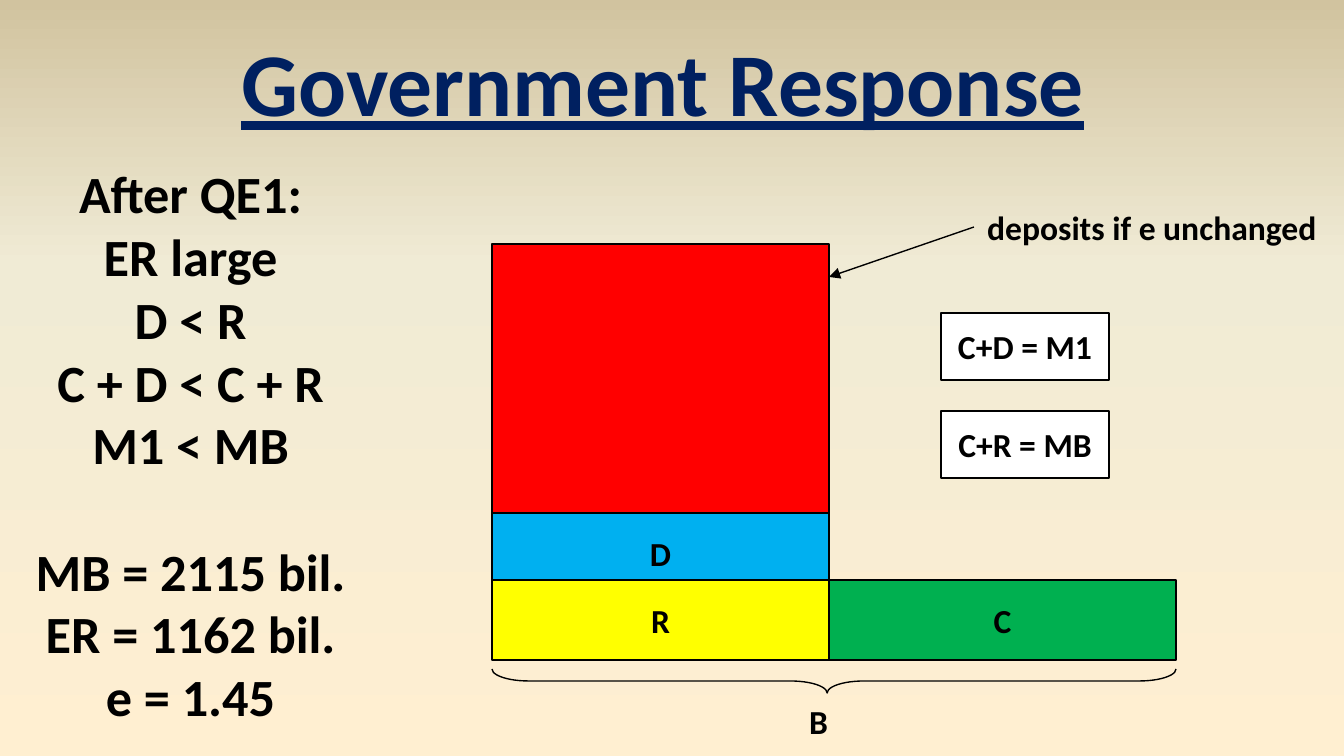
from copy import deepcopy
from pptx import Presentation
from pptx.dml.color import RGBColor
from pptx.enum.shapes import MSO_CONNECTOR, MSO_SHAPE
from pptx.enum.text import MSO_ANCHOR, MSO_AUTO_SIZE, PP_ALIGN
from pptx.oxml.ns import qn
from pptx.util import Pt
from lxml.etree import SubElement

THEME = {
    "font": "Calibri", "head": 48, "body": 28, "note": 18, "rule": 0.75,
    "navy": "002060", "ink": "000000", "white": "FFFFFF",
    "red": "FF0000", "blue": "00B0F0", "gold": "FFFF00", "green": "00B050",
    "wash": [(0, "FFEFD1"), (0.65, "F0EBD5"), (1, "D1C39F")],
}
TITLE = "Government Response"
FACTS = [
    ["After QE1:", "ER large", "D < R", "C + D < C + R", "M1 < MB"],
    ["MB = 2115 bil.", "ER = 1162 bil.", "e = 1.45"],
]
STACK = [("R", 80, "gold", MSO_ANCHOR.MIDDLE),
         ("D", 67, "blue", MSO_ANCHOR.BOTTOM),
         ("", 269, "red", MSO_ANCHOR.MIDDLE)]
SIDE = "C"
SUMS = ["C+D = M1", "C+R = MB"]
NOTE = "deposits if e unchanged"
BASE = "B"

LEFT, MID, RIGHT, FLOOR = 492, 829, 1176, 660
UNIT = 914400 / 134.4


def px(*nums):
    return [round(n * UNIT) for n in nums]


def tint(name):
    return RGBColor.from_string(THEME.get(name, name))


def write(shape, text, size="note", ink="ink", align=PP_ALIGN.CENTER,
          anchor=MSO_ANCHOR.TOP, wrap=False, grow=False, under=None):
    frame = shape.text_frame
    frame.word_wrap = wrap
    frame.vertical_anchor = anchor
    frame.auto_size = (MSO_AUTO_SIZE.SHAPE_TO_FIT_TEXT if grow
                       else MSO_AUTO_SIZE.NONE)
    frame.text = text
    for para in frame.paragraphs:
        para.alignment = align
        for run in para.runs:
            font = run.font
            font.name, font.size, font.bold = THEME["font"], Pt(THEME[size]), True
            font.underline = under
            font.color.rgb = tint(ink)


def edge(line):
    line.color.rgb = tint("ink")
    line.width = Pt(THEME["rule"])


def block(slide, area, text, fill, anchor=MSO_ANCHOR.MIDDLE):
    shape = slide.shapes.add_shape(MSO_SHAPE.RECTANGLE, *px(*area))
    shape.shadow.inherit = False
    shape.fill.solid()
    shape.fill.fore_color.rgb = tint(fill)
    edge(shape.line)
    if text:
        write(shape, text, anchor=anchor)


def label(slide, area, text, **form):
    shape = slide.shapes.add_textbox(*px(*area))
    write(shape, text, grow=True, **form)
    return shape


def wash(slide):
    fill = slide.background.fill
    fill.gradient()
    fill.gradient_angle = 90
    stops = slide.element.find(".//" + qn("a:gsLst"))
    while len(stops) > len(THEME["wash"]):
        stops.remove(stops[-1])
    while len(stops) < len(THEME["wash"]):
        stops.append(deepcopy(stops[0]))
    for stop, (place, shade) in zip(fill.gradient_stops, THEME["wash"]):
        stop.position = place
        stop.color.rgb = tint(shade)


def brace(slide, left, top, width, depth):
    shift = (width - depth) / 2
    shape = slide.shapes.add_shape(
        MSO_SHAPE.LEFT_BRACE, *px(left + shift, top - shift, depth, width))
    shape.rotation = 270
    shape.adjustments[0], shape.adjustments[1] = 1.54, 0.49
    shape.shadow.inherit = False
    shape.fill.background()
    edge(shape.line)


def arrow(slide, start, end):
    line = slide.shapes.add_connector(MSO_CONNECTOR.STRAIGHT, 0, 0, *px(*end))
    line.begin_connect(start, 1)
    edge(line.line)
    props = line.element.spPr
    SubElement(props.find(qn("a:ln")), qn("a:tailEnd"), type="triangle")
    SubElement(props, qn("a:effectLst"))


def main():
    deck = Presentation()
    deck.slide_width, deck.slide_height = px(1344, 756)
    slide = deck.slides.add_slide(deck.slide_layouts[5])
    wash(slide)

    title = slide.shapes.title
    title.left, title.top, title.width, title.height = px(224, 20, 878, 122)
    write(title, TITLE, size="head", ink="navy", grow=True, under=True)

    top = FLOOR
    for text, high, fill, anchor in STACK:
        top -= high
        block(slide, (LEFT, top, MID - LEFT, high), text, fill, anchor)
    high = STACK[0][1]
    block(slide, (MID, FLOOR - high, RIGHT - MID, high), SIDE, "green")

    for row, text in enumerate(SUMS):
        block(slide, (941, 313 + 98 * row, 168, 67), text, "white")

    brace(slide, LEFT, FLOOR + 9, RIGHT - LEFT, 24)
    label(slide, (796, 694, 47, 54), BASE, align=PP_ALIGN.LEFT)
    note = label(slide, (974, 200, 359, 54), NOTE, align=PP_ALIGN.LEFT)
    arrow(slide, note, (MID, 277))

    facts = label(slide, (11, 155, 359, 583), "\n".join(sum(FACTS, [])),
                  size="body", wrap=True)
    first = facts.text_frame.paragraphs[len(FACTS[0])]
    first.space_before = Pt(34)
    deck.save("out.pptx")


if __name__ == "__main__":
    main()
